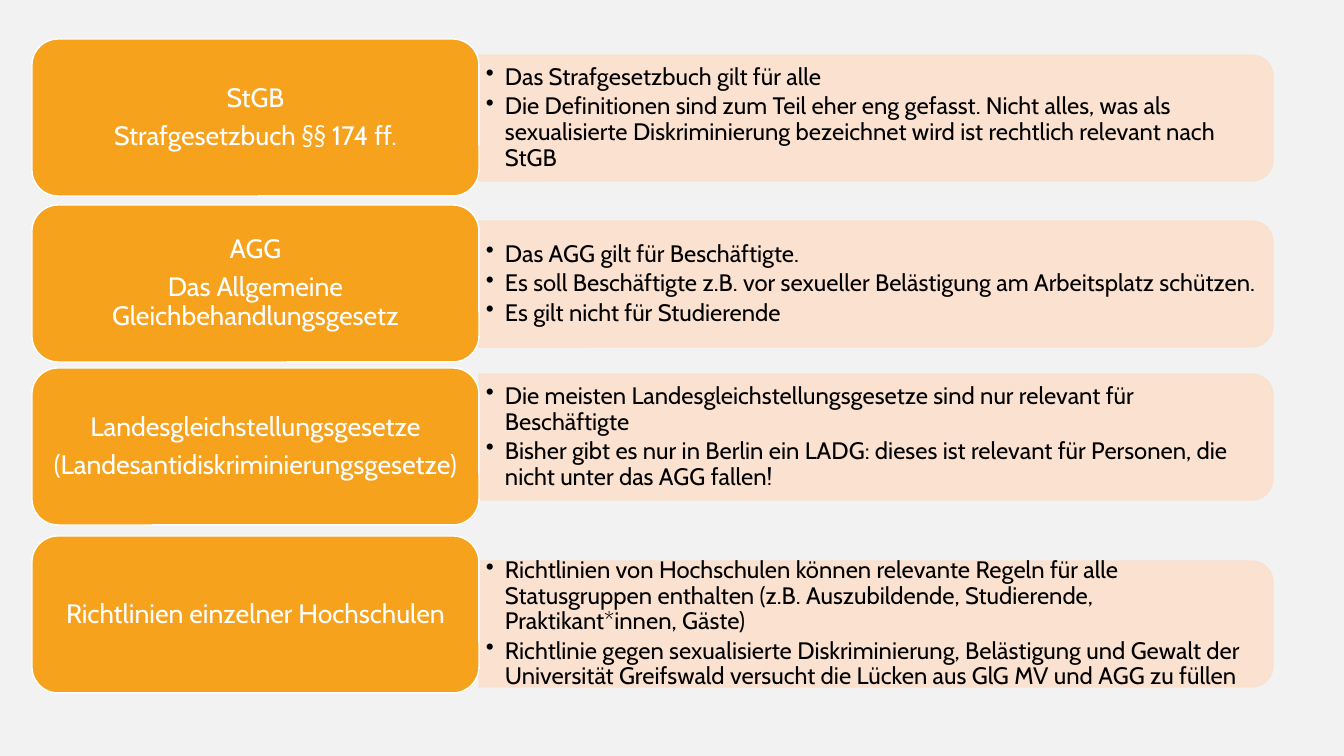
"""Build a slide on the legal bases against sexualised discrimination."""
from lxml import etree
from pptx import Presentation, util as u
from pptx.dml.color import RGBColor
from pptx.enum import shapes, text
from pptx.oxml import ns

PX = 12192000 / 1344


def px(*lengths):
    return [u.Emu(round(length * PX)) for length in lengths]


def color(target, value):
    target.solid()
    target.fore_color.rgb = RGBColor.from_string(value)


laws = [
    (39, 118, ["StGB", "Strafgesetzbuch §§ 174 ff."],
     ["Das Strafgesetzbuch gilt für alle",
      "Die Definitionen sind zum Teil eher eng gefasst. Nicht alles, was als sexualisierte "
      "Diskriminierung bezeichnet wird ist rechtlich relevant nach StGB"]),
    (205, 284, ["AGG", "Das Allgemeine Gleichbehandlungsgesetz"],
     ["Das AGG gilt für Beschäftigte.",
      "Es soll Beschäftigte z.B. vor sexueller Belästigung am Arbeitsplatz schützen.",
      "Es gilt nicht für Studierende"]),
    (368, 437, ["Landesgleichstellungsgesetze", "(Landesantidiskriminierungsgesetze)"],
     ["Die meisten Landesgleichstellungsgesetze sind nur relevant für Beschäftigte",
      "Bisher gibt es nur in Berlin ein LADG: dieses ist relevant für Personen, "
      "die nicht unter das AGG fallen!"]),
    (536, 624, ["Richtlinien einzelner Hochschulen"],
     ["Richtlinien von Hochschulen können relevante Regeln für alle Statusgruppen enthalten "
      "(z.B. Auszubildende, Studierende, Praktikant*innen, Gäste)",
      "Richtlinie gegen sexualisierte Diskriminierung, Belästigung und Gewalt der Universität "
      "Greifswald versucht die Lücken aus GlG MV und AGG zu füllen"]),
]

prs = Presentation()
prs.slide_width, prs.slide_height = px(1344, 756)
slide = prs.slides.add_slide(prs.slide_layouts[6])
color(slide.background.fill, "F2F2F2")

PANEL_LENGTH, PANEL_DEPTH, PANEL_MIDDLE = 794, 126, 876
for card_top, panel_center, titles, points in laws:
    panel = slide.shapes.add_shape(
        shapes.MSO_SHAPE.ROUND_2_SAME_RECTANGLE,
        *px(PANEL_MIDDLE - PANEL_DEPTH / 2, panel_center - PANEL_LENGTH / 2,
            PANEL_DEPTH, PANEL_LENGTH))
    panel.rotation = 90
    details = slide.shapes.add_textbox(*px(479, panel_center - 57, 788, 114))
    card = slide.shapes.add_shape(
        shapes.MSO_SHAPE.ROUNDED_RECTANGLE, *px(32, card_top, 447, 157))

    for box, fill, line in ((panel, "FBE0CD", "FBE0CD"), (card, "F6A21D", "FFFFFF")):
        box.shadow.inherit = False
        color(box.fill, fill)
        color(box.line.fill, line)
        box.line.width = u.Pt(1)
    for tint in panel._element.spPr.iter(ns.qn("a:srgbClr")):
        etree.SubElement(tint, ns.qn("a:alpha"), val="90000")

    for box, lines, inset, size, ink, gap in (
            (details, points, 7, 17, "000000", 2.55), (card, titles, 8, 19, "FFFFFF", 6.65)):
        frame = box.text_frame
        frame.word_wrap = True
        frame.vertical_anchor = text.MSO_ANCHOR.MIDDLE
        frame.margin_left, frame.margin_right = px(inset, inset)
        frame.margin_top, frame.margin_bottom = px(4, 4)
        frame.text = "\n".join(lines)
        for paragraph in frame.paragraphs:
            paragraph.line_spacing = 0.9
            paragraph.space_after = u.Pt(gap)
            if box is card:
                paragraph.alignment = text.PP_ALIGN.CENTER
            else:
                properties = paragraph._p.get_or_add_pPr()
                indent = px(19)[0]
                properties.set("marL", str(indent))
                properties.set("indent", str(-indent))
                etree.SubElement(properties, ns.qn("a:buChar"), char="•")
            paragraph.font.name = "Cabin"
            paragraph.font.size = u.Pt(size)
            color(paragraph.font.fill, ink)

prs.save("out.pptx")
